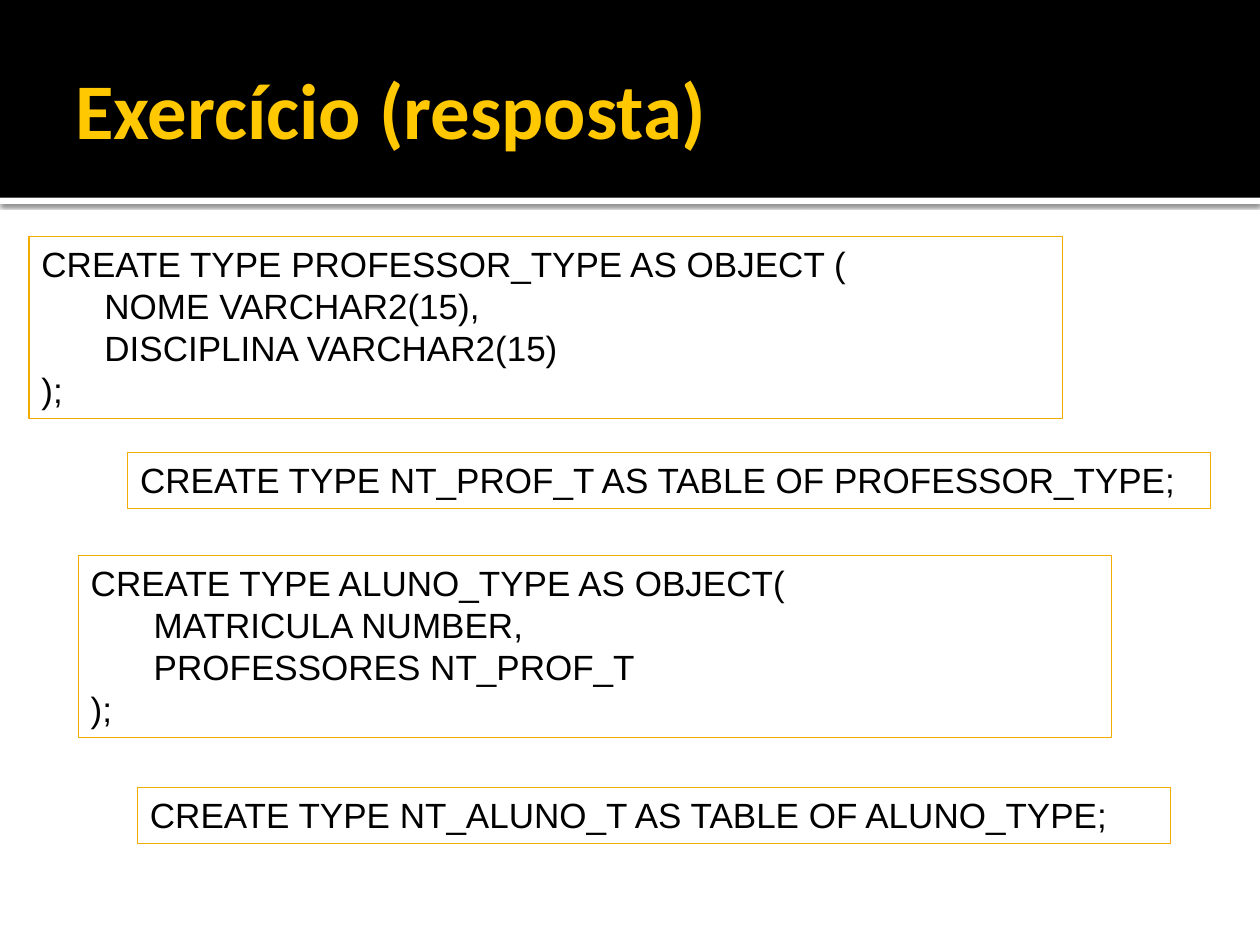
from lxml.etree import SubElement
from pptx import Presentation
from pptx.dml.color import RGBColor
from pptx.enum.shapes import MSO_SHAPE
from pptx.enum.text import MSO_ANCHOR, MSO_AUTO_SIZE, PP_ALIGN
from pptx.oxml.ns import qn
from pptx.util import Pt


def rgb(value):
    return RGBColor.from_string(value)


def write(tf, text, font="Arial", size=20, color="000000", bold=False,
          anchor=MSO_ANCHOR.TOP, left=7.2, right=7.2):
    tf.word_wrap = True
    tf.vertical_anchor = anchor
    tf.margin_left, tf.margin_right = Pt(left), Pt(right)
    tf.margin_top = tf.margin_bottom = Pt(3.6)
    for i, line in enumerate(text.split("\n")):
        p = tf.paragraphs[0] if i == 0 else tf.add_paragraph()
        p.alignment = PP_ALIGN.LEFT
        r = p.add_run()
        r.text = line
        r.font.name = font
        r.font.size = Pt(size)
        r.font.bold = bold
        r.font.color.rgb = rgb(color)


class Deck:
    black = "000000"
    white = "FFFFFF"
    gold = "F0AD00"
    yellow = "FFC800"

    def __init__(self, prs):
        self.slide = prs.slides.add_slide(prs.slide_layouts[6])
        self.slide.background.fill.solid()
        self.slide.background.fill.fore_color.rgb = rgb(self.white)

    def rect(self, x, y, w, h):
        s = self.slide.shapes.add_shape(
            MSO_SHAPE.RECTANGLE, Pt(x), Pt(y), Pt(w), Pt(h))
        s.shadow.inherit = False
        return s

    def band(self, y, h, color):
        s = self.rect(0, y, 720, h)
        s.fill.solid()
        s.fill.fore_color.rgb = rgb(color)
        s.line.fill.background()
        return s

    def shadow_band(self, y, h, color):
        s = self.band(y, h, color)
        effects = s._element.spPr.find(qn("a:effectLst"))
        shadow = SubElement(effects, qn("a:outerShdw"), blurRad=str(Pt(2.5)),
                            dist=str(Pt(0.8)), dir="5400000", rotWithShape="0")
        tint = SubElement(shadow, qn("a:srgbClr"), val=self.black)
        SubElement(tint, qn("a:alpha"), val="60000")

    def title(self, text):
        s = self.slide.shapes.add_textbox(Pt(36), Pt(12.24), Pt(648), Pt(98.64))
        write(s.text_frame, text, font="Calibri", size=45, color=self.yellow,
              bold=True, anchor=MSO_ANCHOR.MIDDLE, right=3.6)

    def code(self, x, y, w, text):
        lines = text.count("\n") + 1
        s = self.rect(x, y, w, 24 * lines + 8)
        s.fill.background()
        s.line.color.rgb = rgb(self.gold)
        s.line.width = Pt(0.75)
        write(s.text_frame, text)
        s.text_frame.auto_size = MSO_AUTO_SIZE.SHAPE_TO_FIT_TEXT


def main():
    prs = Presentation()
    prs.slide_width, prs.slide_height = Pt(720), Pt(540)
    deck = Deck(prs)
    deck.shadow_band(113, 3.6, deck.white)
    deck.band(0, 113, deck.black)
    deck.title("Exercício (resposta)")
    deck.code(16.6, 135, 590.4,
              "CREATE TYPE PROFESSOR_TYPE AS OBJECT (\n"
              "\tNOME VARCHAR2(15),\n"
              "\tDISCIPLINA VARCHAR2(15)\n"
              ");")
    deck.code(73, 258.5, 618.8,
              "CREATE TYPE NT_PROF_T AS TABLE OF PROFESSOR_TYPE;")
    deck.code(44.8, 317.5, 590.4,
              "CREATE TYPE ALUNO_TYPE AS OBJECT(\n"
              "\tMATRICULA NUMBER,\n"
              "\tPROFESSORES NT_PROF_T\n"
              ");")
    deck.code(78.6, 450, 590.4,
              "CREATE TYPE NT_ALUNO_T AS TABLE OF ALUNO_TYPE;")
    prs.save("out.pptx")


if __name__ == "__main__":
    main()
